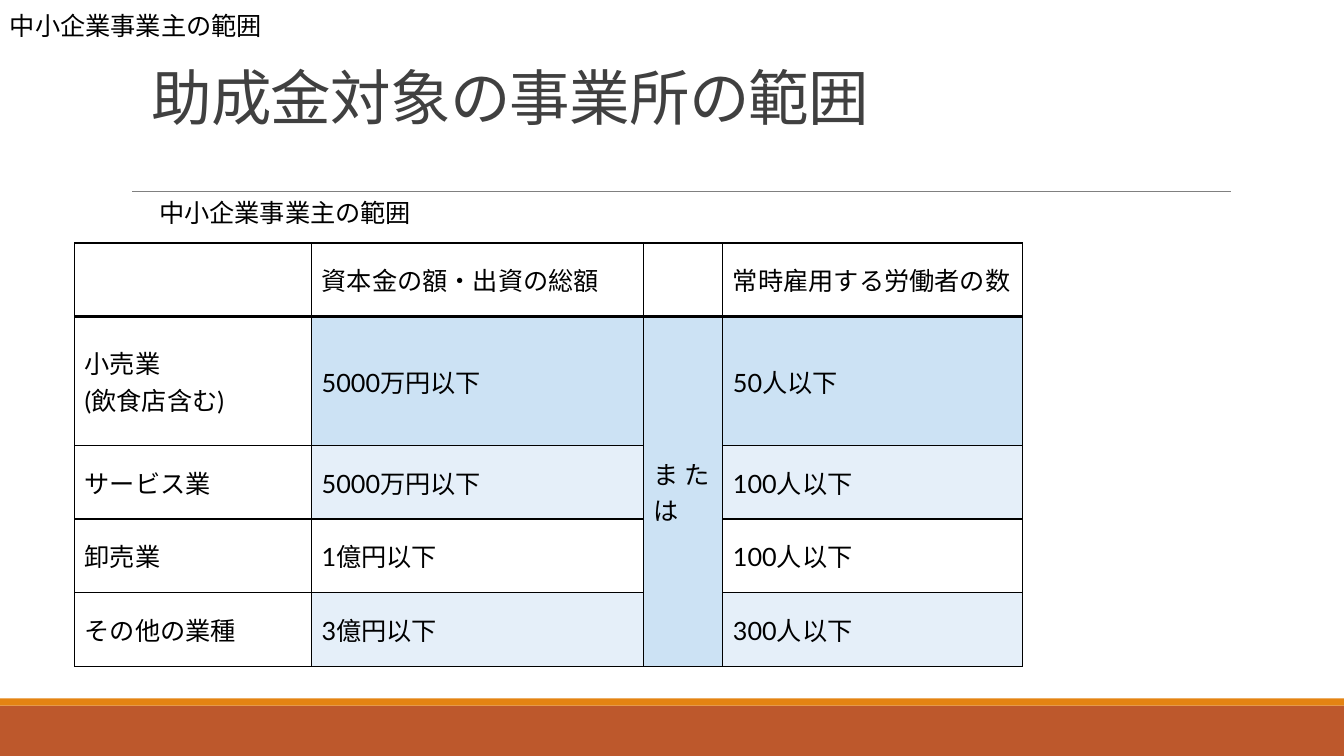
import pptx
import pptx.util
import pptx.dml.color
import pptx.enum.shapes
import pptx.enum.text
import pptx.oxml.ns
import lxml.etree

Inches = pptx.util.Inches
Anchor = pptx.enum.text.MSO_ANCHOR
AutoSize = pptx.enum.text.MSO_AUTO_SIZE

THEME = {
    "title": {"name": "Calibri", "size": 43.2, "color": "404040"},
    "corner": {"name": "Arial", "size": 18, "color": "000000"},
    "caption": {"name": "Calibri", "size": 18, "color": "000000"},
    "cell": {"name": "Lato", "size": 18, "color": "000000"},
    "footer": "BD582C", "stripe": "E48312", "rule": "808080",
    "border": "000000", "strong": "CCE2F4", "light": "E5EFF9",
}
WIDTH, HEIGHT = 13.33, 7.5


def color(code):
    return pptx.dml.color.RGBColor.from_string(code)


def write(frame, text, style, **settings):
    """Set the frame's format, then its text, one paragraph a line."""
    for name, value in settings.items():
        setattr(frame, name, value)
    frame.text = text
    for para in frame.paragraphs:
        para.alignment = pptx.enum.text.PP_ALIGN.LEFT
        for span in para.runs:
            span.font.name = style["name"]
            span.font.size = pptx.util.Pt(style["size"])
            span.font.color.rgb = color(style["color"])


deck = pptx.Presentation()
deck.slide_width, deck.slide_height = Inches(WIDTH), Inches(HEIGHT)
page = deck.slides.add_slide(deck.slide_layouts[5])

# Footer bands
for top, height, fill in ((7, 0.5, "footer"), (6.93, 0.07, "stripe")):
    band = page.shapes.add_shape(
        pptx.enum.shapes.MSO_SHAPE.RECTANGLE,
        0, Inches(top), Inches(WIDTH), Inches(height))
    band.shadow.inherit = False
    band.fill.solid()
    band.fill.fore_color.rgb = color(THEME[fill])
    band.line.fill.background()

# Rule under the title
rule = page.shapes.add_connector(
    pptx.enum.shapes.MSO_CONNECTOR.STRAIGHT,
    Inches(1.31), Inches(1.9), Inches(12.21), Inches(1.9))
rule.line.color.rgb = color(THEME["rule"])
rule.line.width = pptx.util.Pt(0.5)
lxml.etree.SubElement(rule._element.spPr, pptx.oxml.ns.qn("a:effectLst"))

# Title
title = page.shapes.title
title.left, title.top = Inches(1.4), Inches(0.71)
title.width, title.height = Inches(11), Inches(2.07)
write(title.text_frame, "助成金対象の事業所の範囲", THEME["title"],
      vertical_anchor=Anchor.TOP, auto_size=AutoSize.NONE,
      word_wrap=True, margin_top=0)
heading = title.text_frame.paragraphs[0]
heading.line_spacing = 0.85
heading.runs[0].font._element.set("spc", "-50")

# Table of business sizes
columns = (2.35, 3.29, 0.79, 2.97)
rows = (0.73, 1.28, 0.73, 0.73, 0.73)
contents = (
    ("", "資本金の額・出資の総額", "", "常時雇用する労働者の数"),
    ("小売業\n(飲食店含む)", "5000万円以下", "ま た は", "50人以下"),
    ("サービス業", "5000万円以下", "", "100人以下"),
    ("卸売業", "1億円以下", "", "100人以下"),
    ("その他の業種", "3億円以下", "", "300人以下"),
)
row_fills = (None, "strong", "light", None, "light")
table_frame = page.shapes.add_table(
    len(rows), len(columns), Inches(0.74), Inches(2.41),
    Inches(sum(columns)), Inches(sum(rows)))
table = table_frame.table
table.first_row = table.horz_banding = False
for column, width in zip(table.columns, columns):
    column.width = Inches(width)
for row, height in zip(table.rows, rows):
    row.height = Inches(height)
table.cell(1, 2).merge(table.cell(4, 2))

for r, texts in enumerate(contents):
    for c, text in enumerate(texts):
        cell = table.cell(r, c)
        cell.vertical_anchor = Anchor.MIDDLE
        write(cell.text_frame, text, THEME["cell"])
        # Borders, with a heavy line below the header row
        properties = cell._tc.get_or_add_tcPr()
        for side in "LRTB":
            heavy = (r, side) in ((0, "B"), (1, "T"))
            properties.append(pptx.oxml.parse_xml(
                f'<a:ln{side} {pptx.oxml.ns.nsdecls("a")} '
                f'w="{pptx.util.Pt(3 if heavy else 1)}"><a:solidFill>'
                f'<a:srgbClr val="{THEME["border"]}"/></a:solidFill></a:ln{side}>'))
        # The merged column keeps the strong tint all the way down
        fill = "strong" if c == 2 and r else row_fills[r]
        if fill and c:
            cell.fill.solid()
            cell.fill.fore_color.rgb = color(THEME[fill])
        else:
            cell.fill.background()

# Corner label and table caption
labels = (
    (0, 0.05, 2.8, "corner", {"vertical_anchor": Anchor.MIDDLE, "word_wrap": False}),
    (1.48, 1.91, 2.82, "caption", {"vertical_anchor": Anchor.TOP, "word_wrap": True}),
)
for left, top, width, style, settings in labels:
    box = page.shapes.add_textbox(
        Inches(left), Inches(top), Inches(width), Inches(0.4))
    write(box.text_frame, "中小企業事業主の範囲", THEME[style],
          auto_size=AutoSize.SHAPE_TO_FIT_TEXT, **settings)

deck.save("out.pptx")
